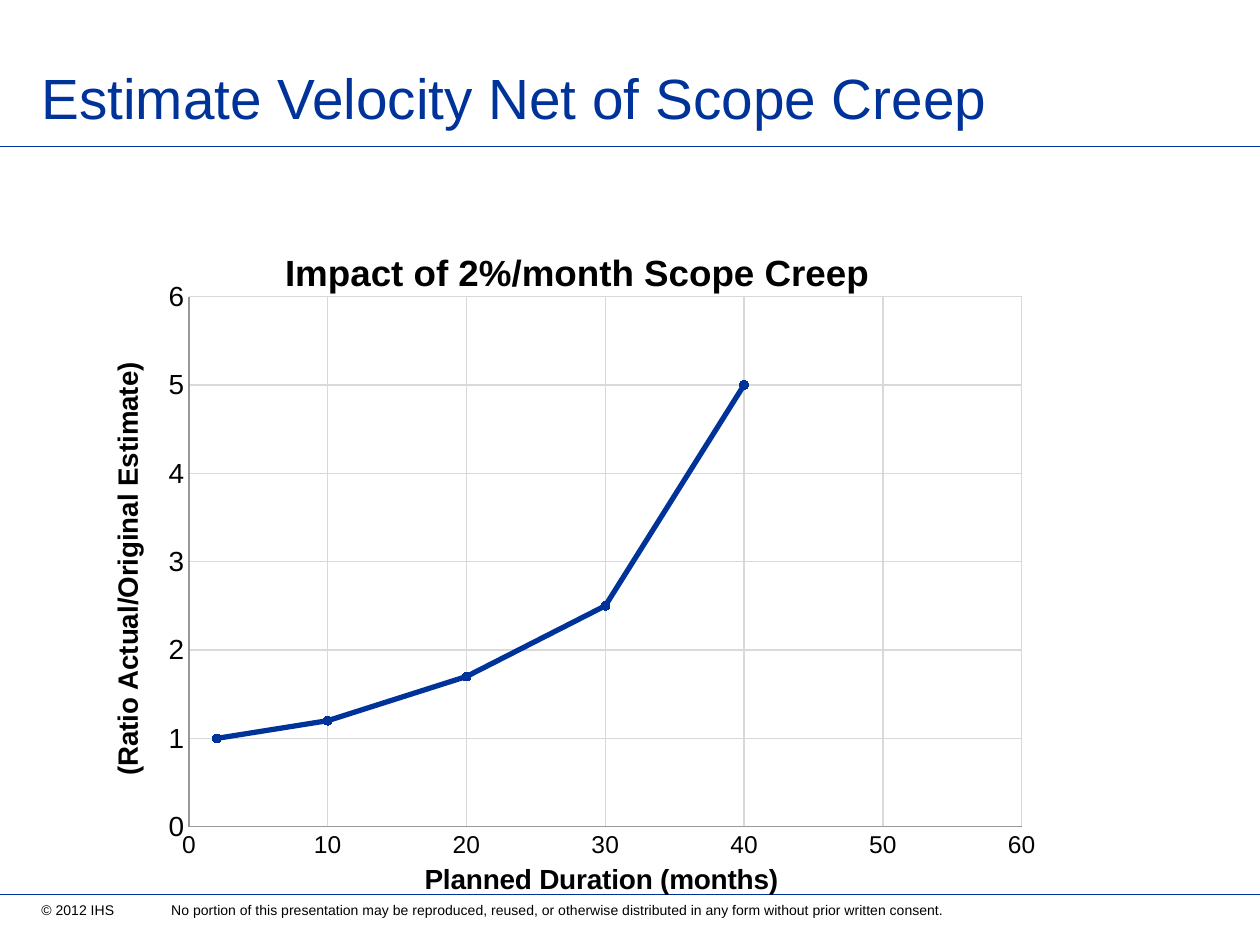
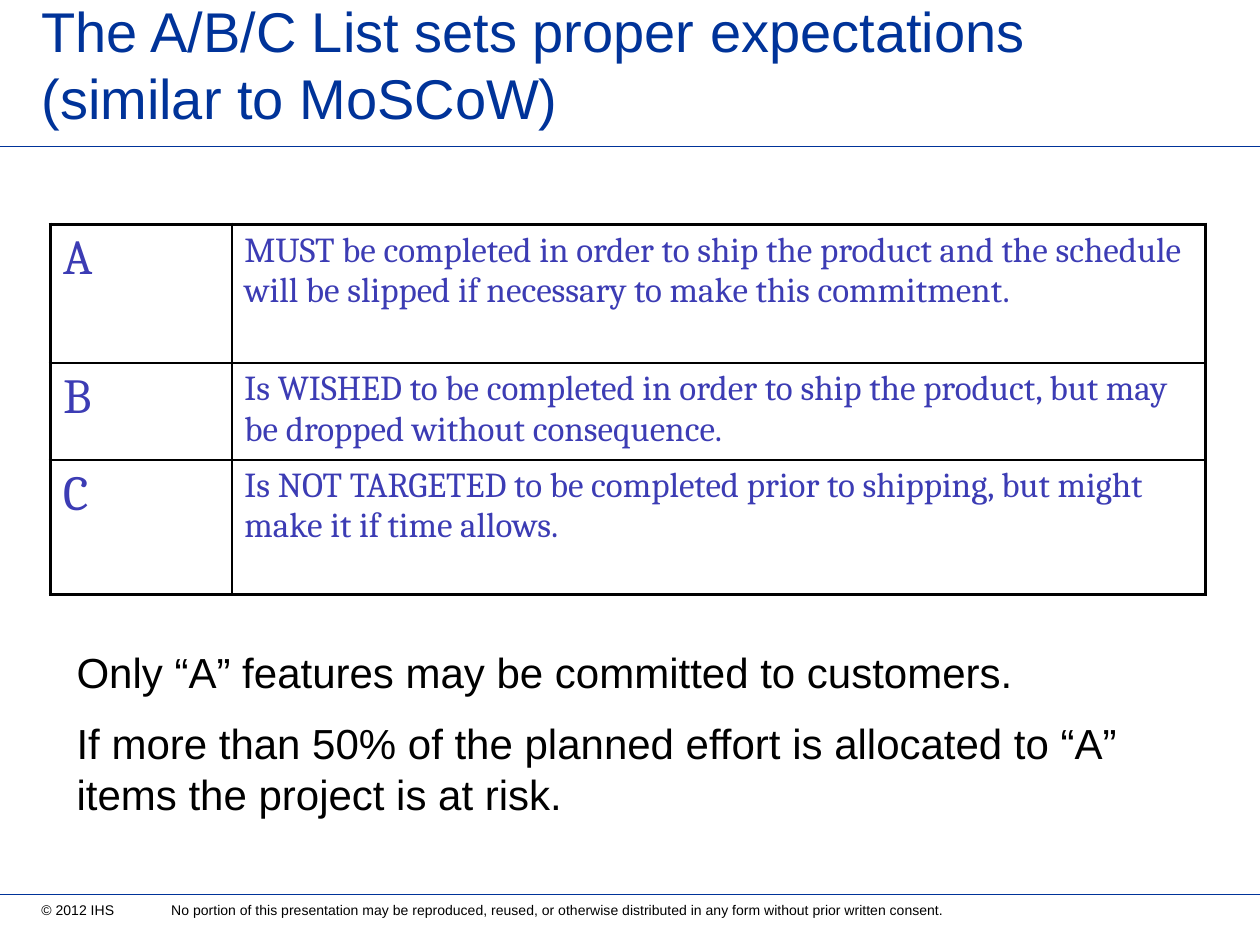
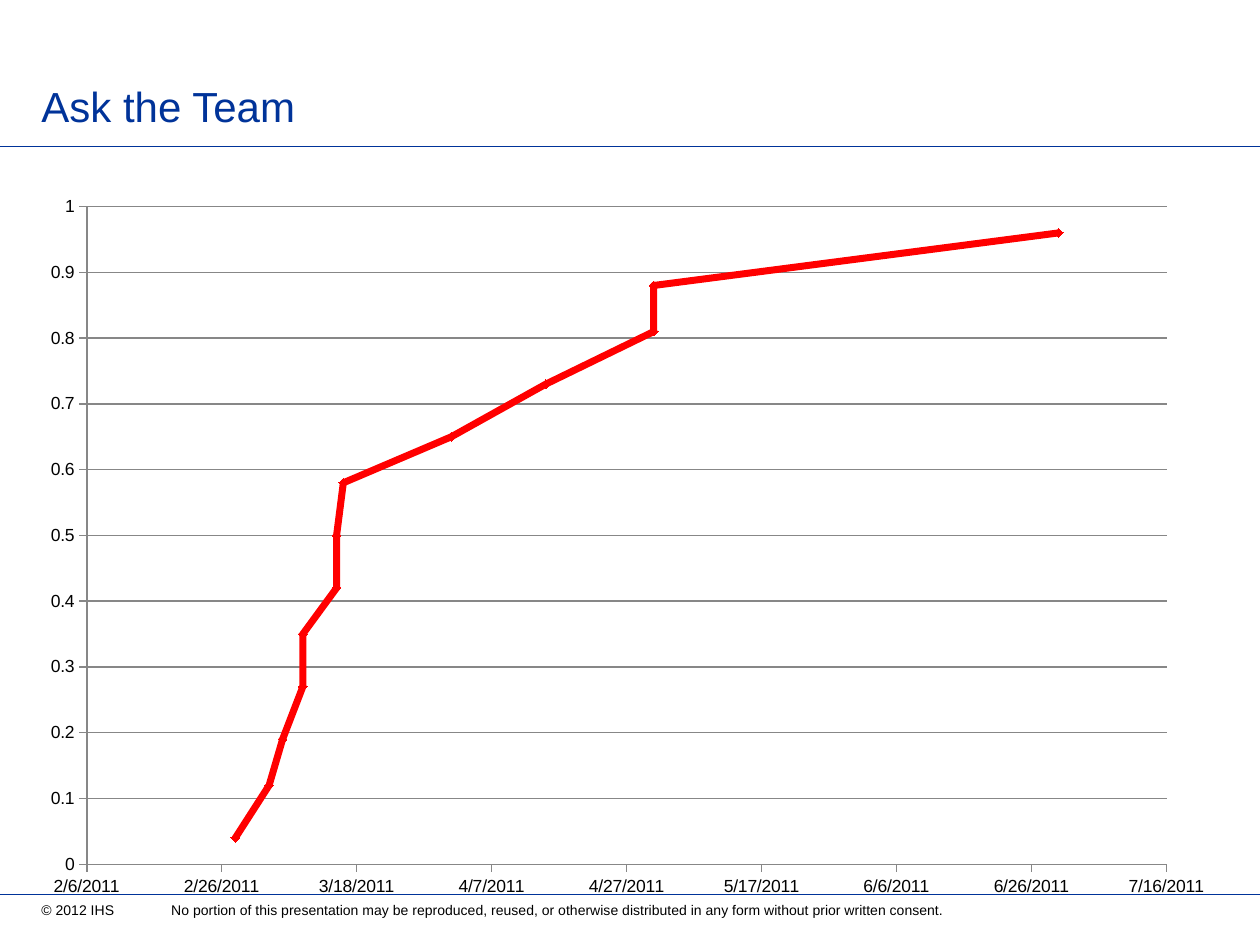
"""Build three slides on project estimation: scope creep, the A/B/C list and asking the team."""
import dataclasses

import lxml.etree
import pptx
import pptx.chart.data
import pptx.dml.color
import pptx.enum.chart
import pptx.enum.shapes
import pptx.enum.text
import pptx.oxml.ns
import pptx.util

Inches = pptx.util.Inches
Pt = pptx.util.Pt
qn = pptx.oxml.ns.qn


@dataclasses.dataclass(frozen=True)
class Theme:
    navy: str = "003399"
    indigo: str = "3C3CB4"
    black: str = "000000"
    red: str = "FF0000"
    axis_grey: str = "999999"
    light_grid: str = "D9D9D9"
    dark_grid: str = "878787"
    sans: str = "Arial"
    serif: str = "Cambria"
    heading: float = 32
    body: float = 24
    footer: float = 8
    grade: float = 28
    rule: float = 20
    chart_title: float = 21
    axis_title: float = 16
    chart_text: float = 10


FOOTER = ("© 2012 IHS \t No portion of this presentation may be reproduced, reused, "
          "or otherwise distributed in any form without prior written consent.")


def rgb(colour):
    return pptx.dml.color.RGBColor.from_string(colour)


def apply(target, values):
    for name, value in values.items():
        setattr(target, name, value)


def set_font(font, size, colour, face, bold=False):
    apply(font, {"size": Pt(size), "name": face, "bold": bold})
    font.color.rgb = rgb(colour)


def set_line(line, colour, width):
    line.color.rgb = rgb(colour)
    line.width = Pt(width)


def place(parent, position, values):
    layout = parent.find(qn("c:layout"))
    if layout is None:
        layout = lxml.etree.Element(qn("c:layout"))
        parent.insert(position, layout)
    for child in list(layout):
        layout.remove(child)
    manual = lxml.etree.SubElement(layout, qn("c:manualLayout"))
    for name, value in values.items():
        lxml.etree.SubElement(manual, qn(f"c:{name}")).set("val", str(value))


class Deck:
    def __init__(self, theme):
        self.theme = theme
        self.presentation = pptx.Presentation()
        apply(self.presentation, {"slide_width": Inches(10), "slide_height": Inches(7.5)})
        self.slide = None
        self.chart_box = None

    def new_slide(self, heading, size=None):
        theme = self.theme
        self.slide = self.presentation.slides.add_slide(self.presentation.slide_layouts[6])
        for height in (1.16, 7.1):
            self.rule(height)
        self.text((0.23, 7.11, 7.45, 0.24), [FOOTER], theme.footer, theme.black, wrap=False)
        self.text((0.23, 0.15, 8.28, 0.94), [heading], size or theme.heading, theme.navy,
                  anchor=pptx.enum.text.MSO_ANCHOR.BOTTOM)

    def rule(self, height):
        rule = self.slide.shapes.add_connector(
            pptx.enum.shapes.MSO_CONNECTOR.STRAIGHT,
            Inches(0), Inches(height), Inches(10), Inches(height))
        set_line(rule.line, self.theme.navy, 0.5)
        lxml.etree.SubElement(rule._element.spPr, qn("a:effectLst"))

    def text(self, box, paragraphs, size, colour, wrap=True,
             anchor=pptx.enum.text.MSO_ANCHOR.TOP, gap=0):
        frame = self.slide.shapes.add_textbox(*map(Inches, box)).text_frame
        apply(frame, {"word_wrap": wrap, "vertical_anchor": anchor})
        for index, words in enumerate(paragraphs):
            paragraph = frame.paragraphs[0] if index == 0 else frame.add_paragraph()
            if index:
                paragraph.space_before = Pt(gap)
            run = paragraph.add_run()
            run.text = words
            set_font(run.font, size, colour, self.theme.sans)

    def table(self, box, widths, heights, rows, sizes):
        table = self.slide.shapes.add_table(
            len(rows), len(widths), *map(Inches, box)).table
        apply(table, {"first_row": False, "horz_banding": False})
        for column, width in zip(table.columns, widths):
            column.width = Inches(width)
        for row, height in zip(table.rows, heights):
            row.height = Inches(height)
        for r, row in enumerate(rows):
            for c, words in enumerate(row):
                cell = table.cell(r, c)
                cell.fill.background()
                run = cell.text_frame.paragraphs[0].add_run()
                run.text = words
                set_font(run.font, sizes[c], self.theme.indigo, self.theme.serif)
                self.borders(cell, {"L": c == 0, "R": c == len(row) - 1,
                                    "T": r == 0, "B": r == len(rows) - 1})

    def borders(self, cell, outer_sides):
        properties = cell._tc.get_or_add_tcPr()
        for position, (side, outer) in enumerate(outer_sides.items()):
            border = lxml.etree.Element(qn(f"a:ln{side}"), w=str(Pt(2.25 if outer else 1)))
            fill = lxml.etree.SubElement(border, qn("a:solidFill"))
            lxml.etree.SubElement(fill, qn("a:srgbClr")).set("val", self.theme.black)
            properties.insert(position, border)

    def chart_share(self, x, y):
        left, top, width, height = self.chart_box
        return {"xMode": "edge", "yMode": "edge",
                "x": (x - left) / width, "y": (y - top) / height}

    def chart(self, box, points, plot, colour, width, marker):
        self.chart_box = box
        data = pptx.chart.data.XyChartData()
        series = data.add_series("Series 1")
        for x, y in points:
            series.add_data_point(x, y)
        chart = self.slide.shapes.add_chart(
            pptx.enum.chart.XL_CHART_TYPE.XY_SCATTER_LINES, *map(Inches, box), data).chart
        apply(chart, {"has_legend": False, "has_title": False})
        set_font(chart.font, self.theme.chart_text, self.theme.black, self.theme.sans)
        chart.plots[0].vary_by_categories = False
        curve = chart.plots[0].series[0]
        curve.smooth = False
        set_line(curve.format.line, colour, width)
        apply(curve.marker, {"style": marker, "size": 5})
        curve.marker.format.fill.solid()
        curve.marker.format.fill.fore_color.rgb = rgb(colour)
        set_line(curve.marker.format.line, colour, 0.75)
        left, top, plot_width, plot_height = plot
        place(chart._chartSpace.chart.plotArea, 0,
              {"layoutTarget": "inner", **self.chart_share(left, top),
               "w": plot_width / box[2], "h": plot_height / box[3]})
        return chart

    def axis(self, axis, limits, size, colour, tick, grid=None, number_format="General"):
        low, high, step = limits
        apply(axis, {"minimum_scale": low, "maximum_scale": high, "major_unit": step,
                     "major_tick_mark": tick,
                     "minor_tick_mark": pptx.enum.chart.XL_TICK_MARK.NONE,
                     "has_major_gridlines": grid is not None})
        apply(axis.tick_labels, {"number_format": number_format,
                                 "number_format_is_linked": False})
        set_font(axis.tick_labels.font, size, self.theme.black, self.theme.sans)
        set_line(axis.format.line, colour, 0.75)
        if grid:
            set_line(axis.major_gridlines.format.line, grid, 0.75)

    def caption(self, title, words, size, left, top):
        run = title.text_frame.paragraphs[0].add_run()
        run.text = words
        set_font(run.font, size, self.theme.black, self.theme.sans, bold=True)
        place(title._element, 1, self.chart_share(left, top))


def scope_creep(deck):
    theme = deck.theme
    deck.new_slide("Estimate Velocity Net of Scope Creep", 32.4)
    creep = deck.chart(
        (0.81, 1.76, 7.53, 5.41),
        [(2, 1), (10, 1.2), (20, 1.7), (30, 2.5), (40, 5)],
        (1.5, 2.36, 6.61, 4.25), theme.navy, 3,
        pptx.enum.chart.XL_MARKER_STYLE.CIRCLE)
    no_tick = pptx.enum.chart.XL_TICK_MARK.NONE
    months, ratio = creep.category_axis, creep.value_axis
    deck.axis(months, (0, 60, 10), 14, theme.axis_grey, no_tick, theme.light_grid)
    deck.axis(ratio, (0, 6, 1), 16, theme.axis_grey, no_tick, theme.light_grid)
    deck.caption(creep.chart_title, "Impact of 2%/month Scope Creep",
                 theme.chart_title, 2.21, 1.93)
    deck.caption(months.axis_title, "Planned Duration (months)", theme.axis_title, 3.33, 6.85)
    deck.caption(ratio.axis_title, "(Ratio Actual/Original Estimate)",
                 theme.axis_title, 0.83, 2.88)


def priority_list(deck):
    theme = deck.theme
    deck.new_slide("The A/B/C List sets proper expectations (similar to MoSCoW)")
    deck.table(
        (0.4, 1.78, 9.17, 2.94), (1.44, 7.73), (1.1, 0.77, 1.07),
        [("A", "MUST be completed in order to ship the product and the schedule "
               "will be slipped if necessary to make this commitment."),
         ("B", "Is WISHED to be completed in order to ship the product, but may "
               "be dropped without consequence."),
         ("C", "Is NOT TARGETED to be completed prior to shipping, but might "
               "make it if time allows.")],
        (theme.grade, theme.rule))
    deck.text(
        (0.51, 5.08, 9, 1.51),
        ["Only “A” features may be committed to customers.",
         "If more than 50% of the planned effort is allocated to “A” items "
         "the project is at risk."],
        theme.body, theme.black, gap=12)


def team_forecast(deck):
    theme = deck.theme
    deck.new_slide("Ask the Team", theme.body)
    first_day = 40580
    days = (22, 27, 29, 32, 32, 37, 37, 38, 54, 68, 84, 84, 144)
    shares = (0.04, 0.12, 0.19, 0.27, 0.35, 0.42, 0.5, 0.58, 0.65, 0.73, 0.81, 0.88, 0.96)
    forecast = deck.chart(
        (0.26, 1.49, 9.48, 5.7),
        [(first_day + day, share) for day, share in zip(days, shares)],
        (0.69, 1.64, 8.57, 5.22), theme.red, 4,
        pptx.enum.chart.XL_MARKER_STYLE.DIAMOND)
    outside = pptx.enum.chart.XL_TICK_MARK.OUTSIDE
    deck.axis(forecast.category_axis, (first_day, first_day + 160, 20), theme.chart_text,
              theme.dark_grid, outside, number_format="m/d/yyyy")
    deck.axis(forecast.value_axis, (0, 1, 0.1), theme.chart_text,
              theme.dark_grid, outside, theme.dark_grid)


def main():
    deck = Deck(Theme())
    for build in (scope_creep, priority_list, team_forecast):
        build(deck)
    deck.presentation.save("out.pptx")


if __name__ == "__main__":
    main()
